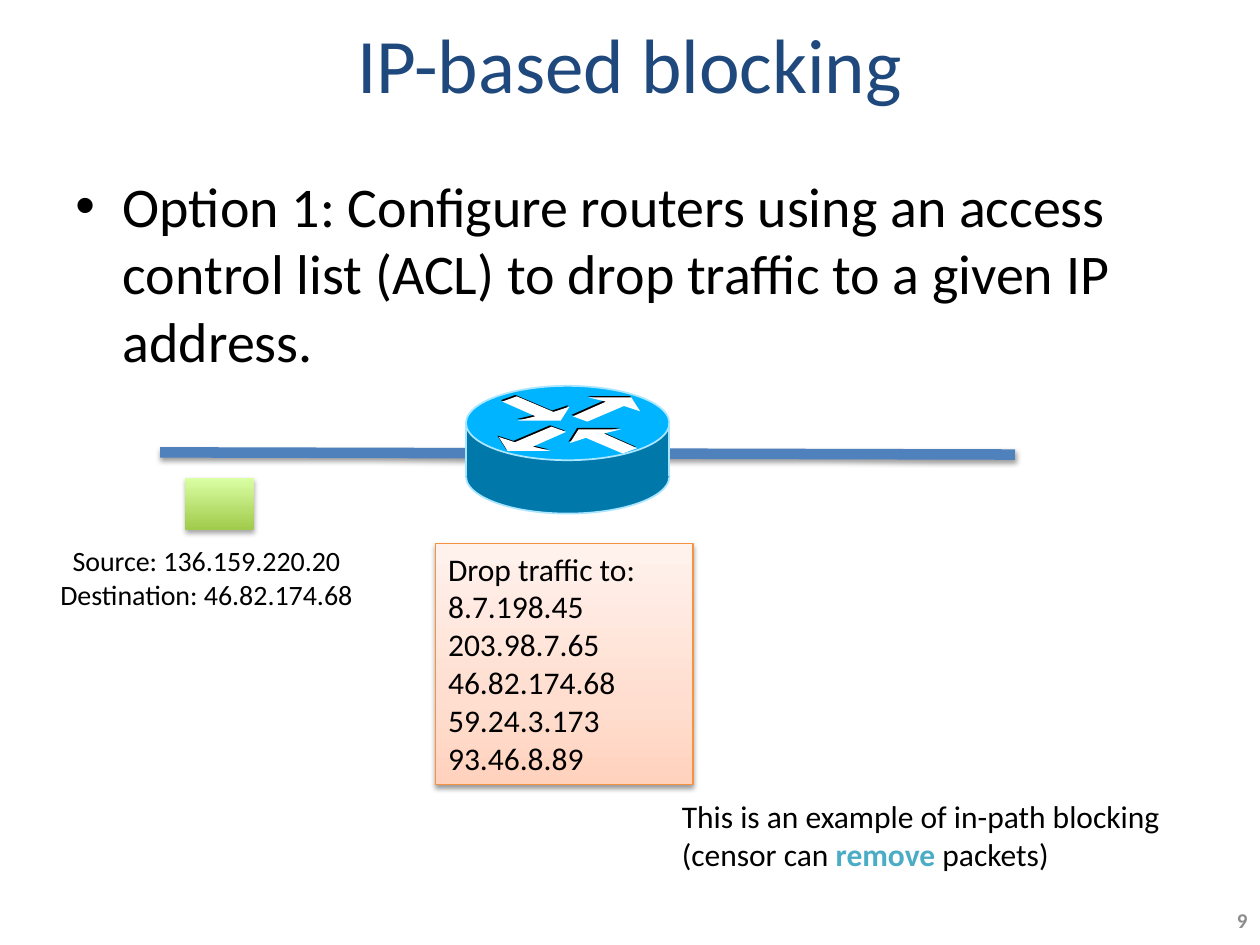
from lxml import etree
from pptx import Presentation
from pptx.dml.color import RGBColor
from pptx.enum import shapes as kinds, text as txt
from pptx.oxml import ns
from pptx.util import Pt

FONT = "Calibri"
BLACK, WHITE = "000000", "FFFFFF"
ROUTER_TOP, ROUTER_SIDE, ROUTER_EDGE = "00B4FF", "0078AA", "AAE6FF"
ARROW = [(0, 10.8), (8.3, 13.8), (29.2, 4.9), (38.4, 7.9), (33.4, 0), (9, 0), (19, 2.4)]
ARROW_WIDTH, ARROW_HEIGHT = 38.4, 13.8
BLOCKED = ["8.7.198.45", "203.98.7.65", "46.82.174.68", "59.24.3.173", "93.46.8.89"]


def color(value):
    """Turn a hex string into a colour."""
    return RGBColor.from_string(value)


def add_shadow(properties, opacity, distance):
    """Give shape properties a soft shadow that falls downwards."""
    for old in properties.findall(ns.qn("a:effectLst")):
        properties.remove(old)
    effects = etree.SubElement(properties, ns.qn("a:effectLst"))
    shadow = etree.SubElement(effects, ns.qn("a:outerShdw"), blurRad=str(Pt(3.1)),
                              dist=str(Pt(distance)), dir="5400000", rotWithShape="0")
    tint = etree.SubElement(shadow, ns.qn("a:srgbClr"), val=BLACK)
    etree.SubElement(tint, ns.qn("a:alpha"), val=str(opacity * 1000))


def add_gradient(shape, stops):
    """Fill a shape from bottom to top with (percent, colour) stops."""
    shape.fill.gradient()
    shape.fill.gradient_angle = 90
    stop_list = shape.element.spPr.find(".//" + ns.qn("a:gsLst"))
    for old in list(stop_list):
        stop_list.remove(old)
    for percent, value in stops:
        stop = etree.SubElement(stop_list, ns.qn("a:gs"), pos=str(percent * 1000))
        etree.SubElement(stop, ns.qn("a:srgbClr"), val=value)


def add_block(parent, kind, box, fill=None, edge=None, width=1):
    """Add a preset shape with a plain fill and an optional edge."""
    block = parent.add_shape(kind, *map(Pt, box))
    block.shadow.inherit = False
    if fill:
        block.fill.solid()
        block.fill.fore_color.rgb = color(fill)
    if edge:
        block.line.color.rgb = color(edge)
        block.line.width = Pt(width)
    else:
        block.line.fill.background()
    return block


def add_line(parent, start, end, stroke, width):
    """Add a straight line without a shadow."""
    line = parent.add_connector(kinds.MSO_CONNECTOR.STRAIGHT, *map(Pt, start + end))
    line.line.color.rgb = color(stroke)
    line.line.width = Pt(width)
    etree.SubElement(line.element.spPr, ns.qn("a:effectLst"))
    return line


def write(shape, paragraphs, size, align=txt.PP_ALIGN.LEFT, anchor=txt.MSO_ANCHOR.TOP):
    """Write paragraphs of (words, colour, bold) runs into a shape."""
    frame = shape.text_frame
    frame.word_wrap = True
    frame.vertical_anchor = anchor
    for index, runs in enumerate(paragraphs):
        paragraph = frame.add_paragraph() if index else frame.paragraphs[0]
        paragraph.alignment = align
        for words, value, bold in runs:
            run = paragraph.add_run()
            run.text = words
            run.font.name, run.font.size, run.font.bold = FONT, Pt(size), bold
            run.font.color.rgb = color(value)


def plain(*lines):
    """Make each line a paragraph of one black run."""
    return [[(line, BLACK, False)] for line in lines]


def add_title(slide, box):
    """Place and write the title."""
    title = slide.shapes.title
    title.left, title.top, title.width, title.height = map(Pt, box)
    write(title, [[("IP-based blocking", "1F497D", False)]], 44,
          txt.PP_ALIGN.CENTER, txt.MSO_ANCHOR.MIDDLE)


def add_option(slide, box):
    """Add the bulleted description of the blocking option."""
    option = slide.shapes.add_textbox(*map(Pt, box))
    write(option, plain("Option 1: Configure routers using an access control list (ACL) "
                        "to drop traffic to a given IP address."), 32)
    paragraph = option.text_frame.paragraphs[0]
    paragraph.space_before = Pt(6.4)
    properties = paragraph._p.get_or_add_pPr()
    properties.set("marL", str(Pt(27)))
    properties.set("indent", str(Pt(-27)))
    etree.SubElement(properties, ns.qn("a:buFont"), typeface="Arial")
    etree.SubElement(properties, ns.qn("a:buChar"), char="•")


def add_access_list(slide, box):
    """Add the list of blocked addresses."""
    access_list = add_block(slide.shapes, kinds.MSO_SHAPE.RECTANGLE, box, None, "F69240", 0.75)
    add_gradient(access_list, [(0, "FFD2BD"), (35, "FFDED0"), (100, "FFF2ED")])
    add_shadow(access_list.element.spPr, 38, 1.6)
    write(access_list, plain("Drop traffic to:", *BLOCKED), 18)


def add_router_arrow(parent, left, top, flip_x, flip_y, fill):
    """Add one arrow of the router, mirrored as asked."""
    points = [(Pt(left + (ARROW_WIDTH - x if flip_x else x)),
               Pt(top + (ARROW_HEIGHT - y if flip_y else y))) for x, y in ARROW]
    builder = parent.build_freeform(*points[0])
    builder.add_line_segments(points[1:], close=True)
    arrow = builder.convert_to_shape()
    arrow.shadow.inherit = False
    arrow.fill.solid()
    arrow.fill.fore_color.rgb = color(fill)
    arrow.line.fill.background()


def add_router(slide, box):
    """Add the router as a cylinder with four arrows on top."""
    left, top, width, height = box
    disc = 42.5
    middle = top + disc / 2
    bottom = top + height - disc / 2
    router = slide.shapes.add_group_shape().shapes
    oval = kinds.MSO_SHAPE.OVAL
    add_block(router, oval, (left, top + height - disc, width, disc), ROUTER_SIDE, ROUTER_EDGE)
    add_block(router, kinds.MSO_SHAPE.RECTANGLE, (left, middle, width, bottom - middle), ROUTER_SIDE)
    add_block(router, oval, (left, top, width, disc), ROUTER_TOP, ROUTER_EDGE)
    for fill, shift in ((BLACK, 0), (WHITE, 0.8)):
        for x, y, flip_x, flip_y in ((60.3, 5.8, False, False), (18, 22.5, True, True),
                                     (20, 5.2, False, True), (58.6, 24, True, False)):
            add_router_arrow(router, left + x + shift, top + y + shift, flip_x, flip_y, fill)
    for x in (left, left + width):
        add_line(router, (x, middle), (x, bottom), ROUTER_EDGE, 1)


def add_packet(slide, box):
    """Add the packet above its source and destination."""
    left, top, width, height = box
    packet = slide.shapes.add_group_shape().shapes
    rectangle = kinds.MSO_SHAPE.RECTANGLE
    label = add_block(packet, rectangle, (left, top + 30, width, height - 30), WHITE)
    write(label, plain("Source: 136.159.220.20", "Destination: 46.82.174.68"), 16,
          txt.PP_ALIGN.CENTER, txt.MSO_ANCHOR.MIDDLE)
    parcel = add_block(packet, rectangle, (left + 88, top, 39, 30))
    add_gradient(parcel, [(0, "A0CA4A"), (100, "DAFFA5")])
    add_shadow(parcel.element.spPr, 35, 1.8)


def add_remark(slide, box):
    """Add the remark on in-path blocking."""
    remark = slide.shapes.add_textbox(*map(Pt, box))
    write(remark, plain("This is an example of in-path blocking")
          + [[("(censor can ", BLACK, False), ("remove ", "4BACC6", True),
              ("packets)", BLACK, False)]], 18)


def add_page_number(slide, box):
    """Add the page number."""
    number = slide.shapes.add_textbox(*map(Pt, box))
    write(number, [[("9", "8C8C8C", True)]], 12, txt.PP_ALIGN.RIGHT, txt.MSO_ANCHOR.MIDDLE)


def main():
    """Build the slide and save it."""
    deck = Presentation()
    deck.slide_width, deck.slide_height = Pt(720), Pt(540)
    slide = deck.slides.add_slide(deck.slide_layouts[5])
    add_title(slide, (36, 0, 648, 72))
    add_option(slide, (36, 94.5, 648, 387))
    add_access_list(slide, (249, 310.5, 147, 138))
    cable = add_line(slide.shapes, (91.5, 258.5), (580, 259.75), "4F81BD", 6)
    add_shadow(cable.element.spPr, 38, 1.6)
    add_router(slide, (266.25, 220.5, 116.25, 73))
    add_packet(slide, (18, 273, 200, 84))
    add_remark(slide, (382.5, 452, 327.5, 51))
    add_page_number(slide, (670.5, 511, 49.5, 29))
    deck.save("out.pptx")


if __name__ == "__main__":
    main()
